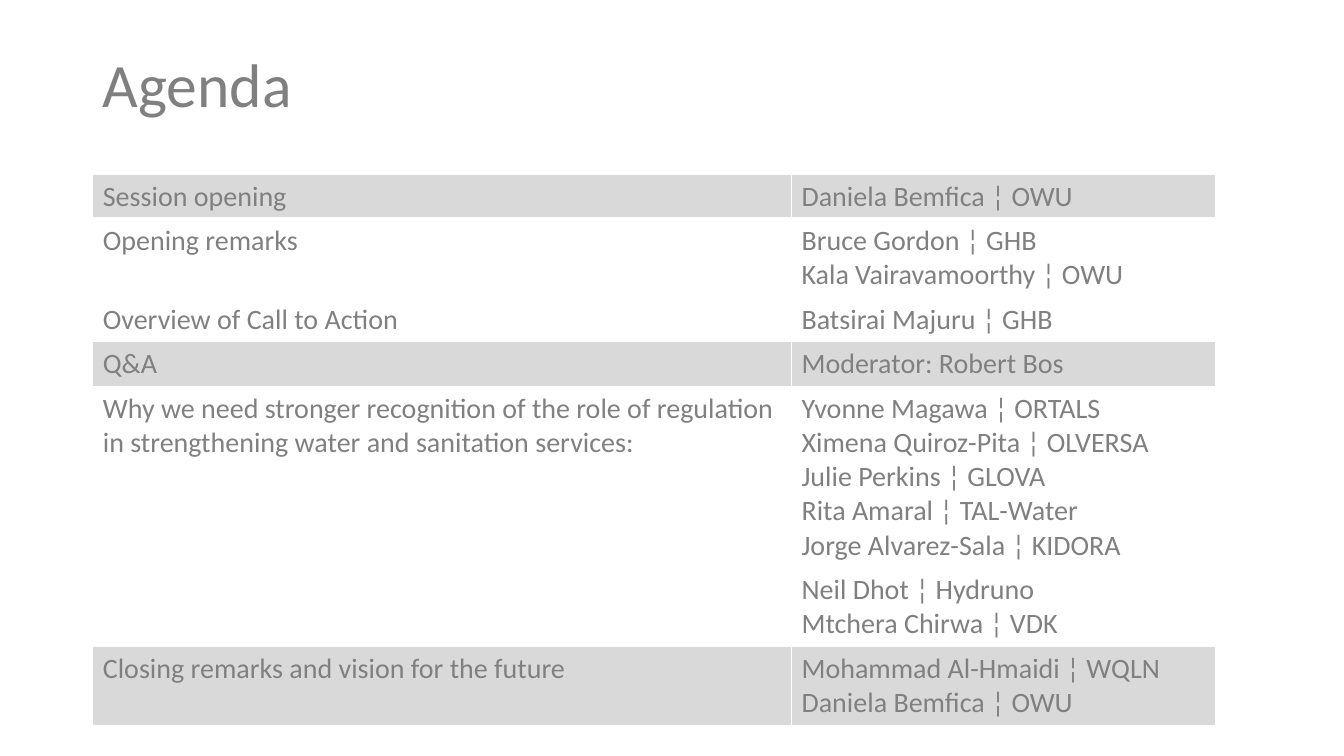
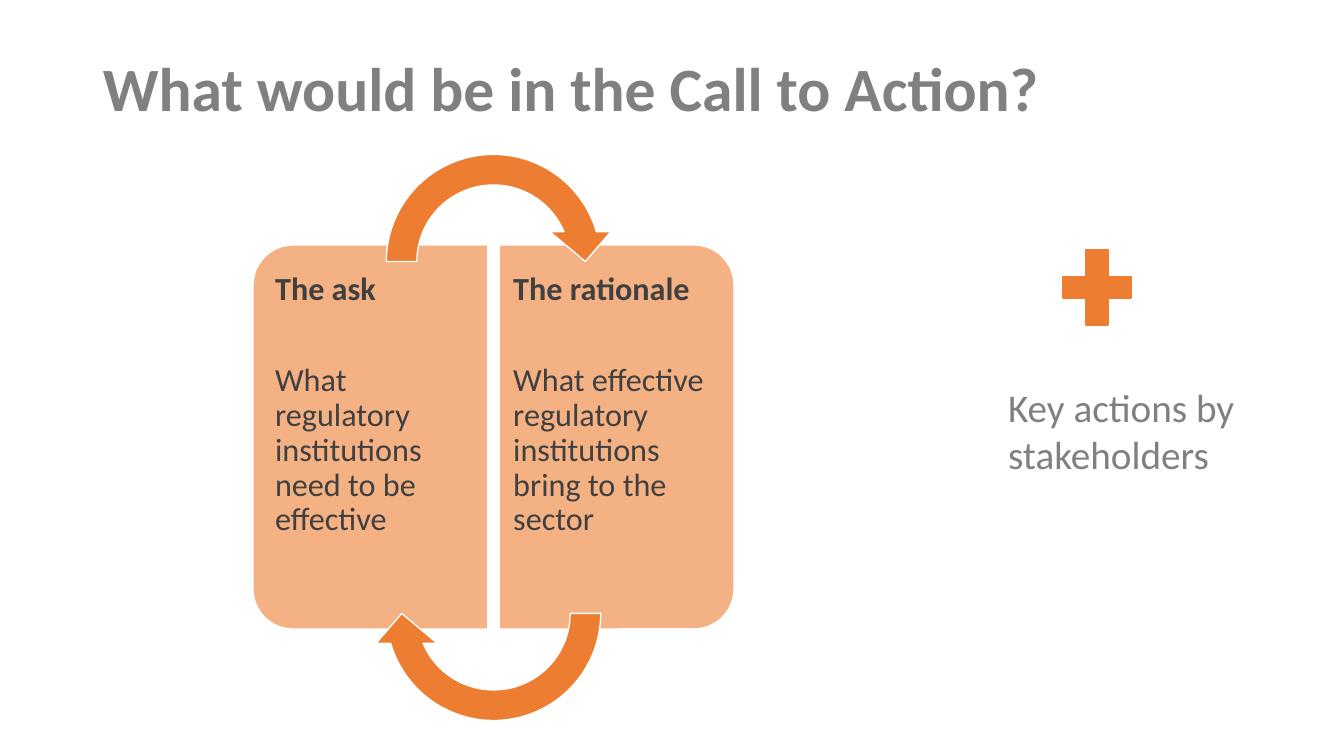
from pptx import Presentation
from pptx.dml.color import RGBColor
from pptx.enum.shapes import MSO_SHAPE
from pptx.enum.text import MSO_ANCHOR, MSO_AUTO_SIZE, PP_ALIGN
from pptx.oxml import parse_xml
from pptx.oxml.ns import nsdecls
from pptx.util import Pt

EMU_PER_PX = 9144
FONT = "Calibri"
GREY = RGBColor(0x80, 0x80, 0x80)
DARK = RGBColor(0x40, 0x40, 0x40)
BAND = RGBColor(0xD9, 0xD9, 0xD9)
WHITE = RGBColor(0xFF, 0xFF, 0xFF)
ORANGE = RGBColor(0xED, 0x7D, 0x31)
PEACH = RGBColor(0xF4, 0xB1, 0x83)

LEFT = PP_ALIGN.LEFT
TOP = MSO_ANCHOR.TOP
MIDDLE = MSO_ANCHOR.MIDDLE
NO_AUTOFIT = MSO_AUTO_SIZE.NONE
HALF_PANEL = MSO_SHAPE.ROUND_2_SAME_RECTANGLE
CIRCULAR_ARROW = MSO_SHAPE.CIRCULAR_ARROW
PLUS = MSO_SHAPE.MATH_PLUS
TITLE_ONLY = 5

AGENDA = [
    ("Session opening", ["Daniela Bemfica ¦ OWU"], True),
    ("Opening remarks", ["Bruce Gordon ¦ GHB", "Kala Vairavamoorthy ¦ OWU"], False),
    ("Overview of Call to Action", ["Batsirai Majuru ¦ GHB"], False),
    ("Q&A", ["Moderator: Robert Bos"], True),
    ("Why we need stronger recognition of the role of regulation in "
     "strengthening water and sanitation services:",
     ["Yvonne Magawa ¦ ORTALS", "Ximena Quiroz-Pita ¦ OLVERSA",
      "Julie Perkins ¦ GLOVA", "Rita Amaral ¦ TAL-Water",
      "Jorge Alvarez-Sala ¦ KIDORA"], False),
    ("", ["Neil Dhot ¦ Hydruno", "Mtchera Chirwa ¦ VDK"], False),
    ("Closing remarks and vision for the future",
     ["Mohammad Al-Hmaidi ¦ WQLN", "Daniela Bemfica ¦ OWU"], True),
]

PANELS = [
    (177, 270, 263, (10, 14), "The ask",
     "What regulatory institutions need to be effective"),
    (421, 90, 495, (14, 10), "The rationale",
     "What effective regulatory institutions bring to the sector"),
]


def px(length):
    return length * EMU_PER_PX


def write(paragraph, text, size=20, color=GREY, bold=False, line_spacing=None, after=0):
    paragraph.alignment = LEFT
    paragraph.line_spacing = line_spacing
    paragraph.space_before = Pt(0)
    paragraph.space_after = Pt(after)
    run = paragraph.add_run()
    run.text = text
    run.font.name = FONT
    run.font.size = Pt(size)
    run.font.bold = bold
    run.font.color.rgb = color


def write_lines(frame, lines, **style):
    for index, line in enumerate(lines):
        paragraph = frame.add_paragraph() if index else frame.paragraphs[0]
        write(paragraph, line, **style)


def set_borders(cell, bottom):
    properties = cell._tc.get_or_add_tcPr()
    for side, points in (("L", 1), ("R", 1), ("T", 1), ("B", bottom)):
        properties.append(parse_xml(
            f'<a:ln{side} {nsdecls("a")} w="{Pt(points)}"><a:solidFill>'
            f'<a:srgbClr val="{WHITE}"/></a:solidFill></a:ln{side}>'))


class Deck:
    def __init__(self):
        self.presentation = Presentation()
        self.presentation.slide_width = px(1333)
        self.presentation.slide_height = px(750)
        self.slide = None

    def add_slide(self, title, top, height, bold=False):
        layout = self.presentation.slide_layouts[TITLE_ONLY]
        self.slide = self.presentation.slides.add_slide(layout)
        shape = self.slide.shapes.title
        shape.left, shape.top = px(92), px(top)
        shape.width, shape.height = px(1150), px(height)
        frame = shape.text_frame
        frame.auto_size = NO_AUTOFIT
        frame.vertical_anchor = MIDDLE
        write(frame.paragraphs[0], title, size=44, bold=bold, line_spacing=0.9)

    def add_text(self, left, top, width, height, insets=(10, 5, 10, 5)):
        shape = self.slide.shapes.add_textbox(px(left), px(top), px(width), px(height))
        frame = shape.text_frame
        frame.word_wrap = True
        frame.vertical_anchor = TOP
        (frame.margin_left, frame.margin_top,
         frame.margin_right, frame.margin_bottom) = map(px, insets)
        return frame

    def add_shape(self, kind, left, top, width, height, fill,
                  line=WHITE, rotation=0, adjustments=()):
        shape = self.slide.shapes.add_shape(kind, px(left), px(top), px(width), px(height))
        shape.shadow.inherit = False
        shape.rotation = rotation
        shape.fill.solid()
        shape.fill.fore_color.rgb = fill
        shape.line.color.rgb = line
        shape.line.width = Pt(1)
        for index, value in enumerate(adjustments):
            shape.adjustments[index] = value

    def add_agenda(self, left, top, widths, rows):
        heights = [10 + 34 * len(speakers) for _, speakers, _ in rows]
        table = self.slide.shapes.add_table(
            len(rows), len(widths), px(left), px(top),
            px(sum(widths)), px(sum(heights))).table
        table.first_row = table.horz_banding = False
        for column, width in zip(table.columns, widths):
            column.width = px(width)
        for index, (topic, speakers, shaded) in enumerate(rows):
            table.rows[index].height = px(heights[index])
            for cell, lines in zip(table.rows[index].cells, ([topic], speakers)):
                write_lines(cell.text_frame, lines)
                set_borders(cell, bottom=1 if index else 3)
                cell.fill.solid()
                cell.fill.fore_color.rgb = BAND if shaded else WHITE


def main():
    deck = Deck()

    deck.add_slide("Agenda", top=14, height=145)
    deck.add_agenda(92, 173, (693, 421), AGENDA)

    deck.add_slide("What would be in the Call to Action?", top=40, height=102, bold=True)
    for left, rotation, text_left, (inset_left, inset_right), heading, body in PANELS:
        deck.add_shape(HALF_PANEL, left, 317, 381, 233, PEACH,
                       rotation=rotation, adjustments=(0.17, 0))
        frame = deck.add_text(text_left, 255, 221, 358, (inset_left, 16, inset_right, 16))
        style = {"size": 23, "color": DARK, "line_spacing": 0.9}
        write(frame.paragraphs[0], heading, bold=True, after=40, **style)
        write(frame.add_paragraph(), body, **style)
    for top, rotation in ((138, 0), (487, 180)):
        deck.add_shape(CIRCULAR_ARROW, 368, top, 243, 243, ORANGE, rotation=rotation,
                       adjustments=(0.125, 11.42, 204.58, 108, 0.125))
    deck.add_shape(PLUS, 1042, 234, 92, 102, ORANGE, line=ORANGE)
    frame = deck.add_text(990, 375, 256, 104)
    write(frame.paragraphs[0], "Key actions by stakeholders", size=28)

    deck.presentation.save("out.pptx")


if __name__ == "__main__":
    main()
